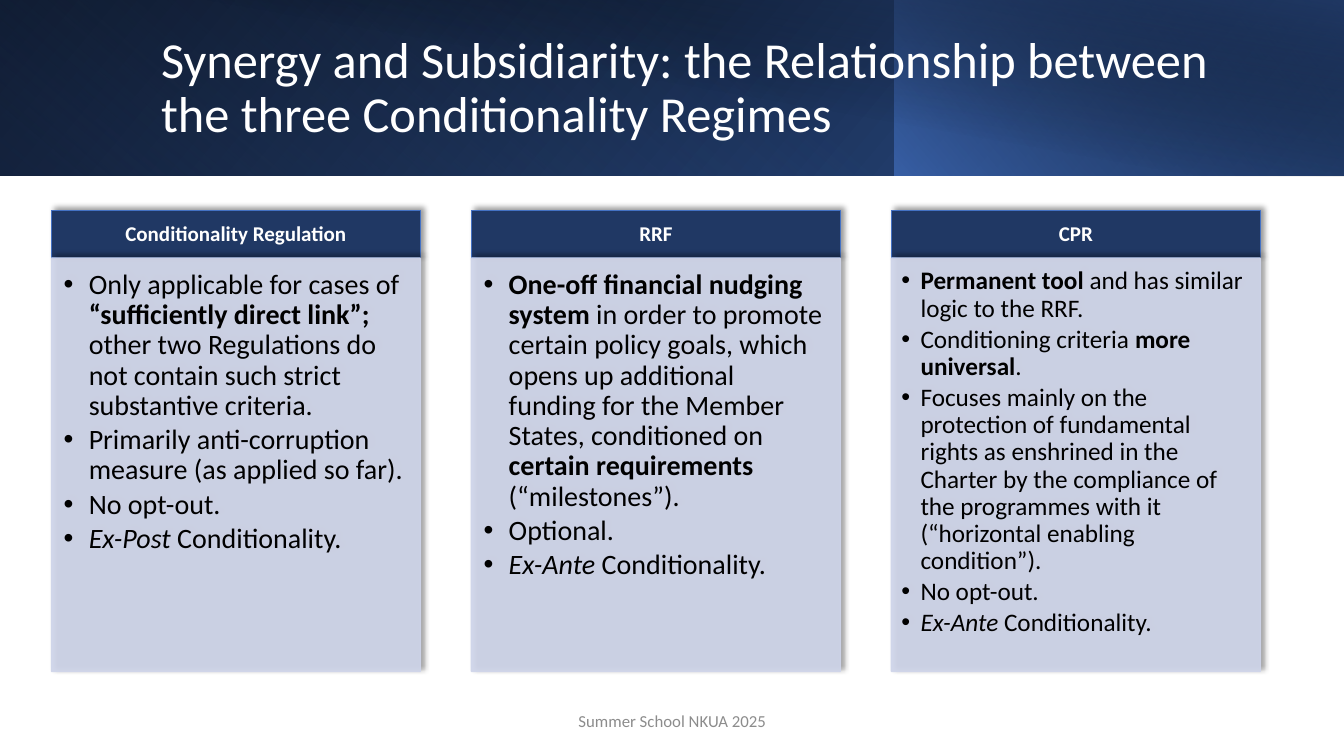
"""Build a slide comparing three conditionality regimes in cards under a gradient banner."""
from lxml import etree
from pptx import Presentation
from pptx.dml.color import RGBColor
from pptx.enum.shapes import MSO_SHAPE
from pptx.enum.text import MSO_ANCHOR, PP_ALIGN
from pptx.oxml.ns import qn
from pptx.util import Inches, Pt

RECTANGLE = MSO_SHAPE.RECTANGLE
TOP, MIDDLE = MSO_ANCHOR.TOP, MSO_ANCHOR.MIDDLE
LEFT, CENTER = PP_ALIGN.LEFT, PP_ALIGN.CENTER

BLACK = RGBColor(0x00, 0x00, 0x00)
WHITE = RGBColor(0xFF, 0xFF, 0xFF)
NAVY = RGBColor(0x20, 0x38, 0x64)
MID_BLUE = RGBColor(0x2F, 0x55, 0x97)
BLUE = RGBColor(0x44, 0x72, 0xC4)
PALE_BLUE = RGBColor(0xCF, 0xD5, 0xEA)
GRAY = RGBColor(0x8C, 0x8C, 0x8C)

FONT = "Calibri"
WIDTH, HEIGHT = Inches(13.33), Inches(7.5)
COLUMN, ROW = WIDTH / 100, HEIGHT / 100
CARD_LEFT, CARD_STEP, CARD_WIDTH = 3.83, 31.25, 27.45
HEADER_TOP, HEADER_ROWS = 27.87, 6.27
BODY_TOP, BODY_ROWS = 34.13, 54.67
HEADER_INSETS = (0.12, 0.07, 0.12, 0.07)

BANNER = [
    ((0, 0, 100, 23.2), 140, [(0, BLACK, 100), (100, MID_BLUE, 100)], True, 0),
    ((0, 0, 66.6, 23.2), 230, [(20, BLUE, 0), (100, NAVY, 55)], True, 180),
    ((66.55, 0, 33.45, 23.2), 220, [(0, BLUE, 66), (100, BLACK, 30)], True, 0),
    ((3.75, 0, 96.25, 23.33), 280, [(50, BLACK, 0), (99, NAVY, 52)], False, 0),
]

CARDS = [
    ("Conditionality Regulation", 20, 0.25, (0.12, 0.12, 0.16, 0.17), [
        [("Only applicable for cases of ", ""),
         ("“sufficiently direct link”; ", "bold"),
         ("other two Regulations do not contain such strict substantive criteria.", "")],
        [("Primarily anti-corruption measure (as applied so far).", "")],
        [("No opt-out.", "")],
        [("Ex-Post", "italic"), (" Conditionality.", "")],
    ]),
    ("RRF", 20, 0.25, (0.12, 0.12, 0.16, 0.17), [
        [("One-off financial nudging system ", "bold"),
         ("in order to promote certain policy goals, which opens up additional "
          "funding for the Member States, conditioned on ", ""),
         ("certain requirements ", "bold"),
         ("(“milestones”).", "")],
        [("Optional.", "")],
        [("Ex-Ante", "italic"), (" Conditionality.", "")],
    ]),
    ("CPR", 18, 0.19, (0.1, 0.1, 0.14, 0.16), [
        [("Permanent tool ", "bold"), ("and has similar logic to the RRF.", "")],
        [("Conditioning criteria ", ""), ("more universal", "bold"), (".", "")],
        [("Focuses mainly on the protection of fundamental rights as enshrined in the "
          "Charter by the compliance of the programmes with it "
          "(“horizontal enabling condition”).", "")],
        [("No opt-out.", "")],
        [("Ex-Ante", "italic"), (" Conditionality.", "")],
    ]),
]


def place(left, top, width, height):
    """Turn grid columns and rows into slide lengths."""
    return round(left * COLUMN), round(top * ROW), round(width * COLUMN), round(height * ROW)


def add_node(parent, tag, **attributes):
    """Append a drawing element with its attributes."""
    node = etree.SubElement(parent, qn(tag))
    for name, value in attributes.items():
        node.set(name, str(value))
    return node


def add_color(parent, color, opacity):
    """Append a colour with an opacity in percent."""
    add_node(add_node(parent, "a:srgbClr", val=color), "a:alpha", val=opacity * 1000)


def add_band(page, area, angle, stops, flipped, rotation):
    """Draw one gradient layer of the banner."""
    band = page.shapes.add_shape(RECTANGLE, *place(*area))
    band.shadow.inherit = False
    band.line.fill.background()
    band.rotation = rotation
    properties = band._element.spPr
    if flipped:
        properties.find(qn("a:xfrm")).set("flipH", "1")
    gradient = add_node(properties, "a:gradFill", rotWithShape=1)
    stop_list = add_node(gradient, "a:gsLst")
    for position, color, opacity in stops:
        add_color(add_node(stop_list, "a:gs", pos=position * 1000), color, opacity)
    add_node(gradient, "a:lin", ang=angle * 60000, scaled=0)
    properties.find(qn("a:ln")).addprevious(gradient)


def add_panel(page, area, fill, line, opacity):
    """Draw a filled card part with a soft shadow to the upper right."""
    panel = page.shapes.add_shape(RECTANGLE, *place(*area))
    panel.fill.solid()
    panel.fill.fore_color.rgb = fill
    panel.line.color.rgb = line
    panel.line.width = Pt(1)
    properties = panel._element.spPr
    if opacity < 100:
        for color in list(properties.iter(qn("a:srgbClr"))):
            add_node(color, "a:alpha", val=opacity * 1000)
    panel.shadow.inherit = False
    shadow = add_node(properties.find(qn("a:effectLst")), "a:outerShdw", blurRad=Pt(4),
                      dist=Pt(3), dir=315 * 60000, algn="bl", rotWithShape=0)
    add_color(shadow, BLACK, 40)
    return panel


def set_frame(box, anchor, insets=(0.1, 0.05, 0.1, 0.05)):
    """Set wrapping, anchor and insets of a text frame."""
    frame = box.text_frame
    frame.word_wrap = True
    frame.vertical_anchor = anchor
    frame.margin_left, frame.margin_top, frame.margin_right, frame.margin_bottom = map(
        Inches, insets)
    return frame


def write(para, spans, size, color, align, spacing=0.9):
    """Fill a paragraph with plain, bold and italic spans."""
    para.alignment = align
    para.line_spacing = spacing
    for text, style in spans:
        span = para.add_run()
        span.text = text
        span.font.name = FONT
        span.font.size = Pt(size)
        span.font.color.rgb = color
        span.font.bold = style == "bold"
        span.font.italic = style == "italic"


def add_bullet(para, indent):
    """Give a paragraph a hanging bullet."""
    properties = para._p.get_or_add_pPr()
    properties.set("marL", str(Inches(indent)))
    properties.set("indent", str(-Inches(indent)))
    add_node(properties, "a:buFont", typeface="Arial")
    add_node(properties, "a:buChar", char="•")


def add_card(page, left, heading, size, indent, insets, points):
    """Draw a card with its heading and bullet points."""
    header = add_panel(page, (left, HEADER_TOP, CARD_WIDTH, HEADER_ROWS), NAVY, BLUE, 100)
    frame = set_frame(header, MIDDLE, HEADER_INSETS)
    write(frame.paragraphs[0], [(heading, "bold")], 15, WHITE, CENTER)
    body = add_panel(page, (left, BODY_TOP, CARD_WIDTH, BODY_ROWS), PALE_BLUE, PALE_BLUE, 90)
    frame = set_frame(body, TOP, insets)
    for index, spans in enumerate(points):
        para = frame.add_paragraph() if index else frame.paragraphs[0]
        write(para, spans, size, BLACK, LEFT)
        para.space_after = Pt(size * 0.15)
        add_bullet(para, indent)


def add_label(page, area, text, size, color, align, spacing):
    """Add a single-paragraph text box."""
    box = page.shapes.add_textbox(*place(*area))
    frame = set_frame(box, MIDDLE)
    write(frame.paragraphs[0], [(text, "")], size, color, align, spacing)


def main():
    """Build the slide and save it."""
    deck = Presentation()
    deck.slide_width, deck.slide_height = WIDTH, HEIGHT
    page = deck.slides.add_slide(deck.slide_layouts[6])
    for band in BANNER:
        add_band(page, *band)
    add_label(page, (11.25, 4.27, 81.17, 15.07),
              "Synergy and Subsidiarity: the Relationship between the three Conditionality Regimes",
              36, WHITE, LEFT, 0.9)
    for index, card in enumerate(CARDS):
        add_card(page, CARD_LEFT + index * CARD_STEP, *card)
    add_label(page, (33.15, 92.67, 33.75, 5.33), "Summer School NKUA 2025", 12, GRAY, CENTER, 1.0)
    deck.save("out.pptx")


if __name__ == "__main__":
    main()
